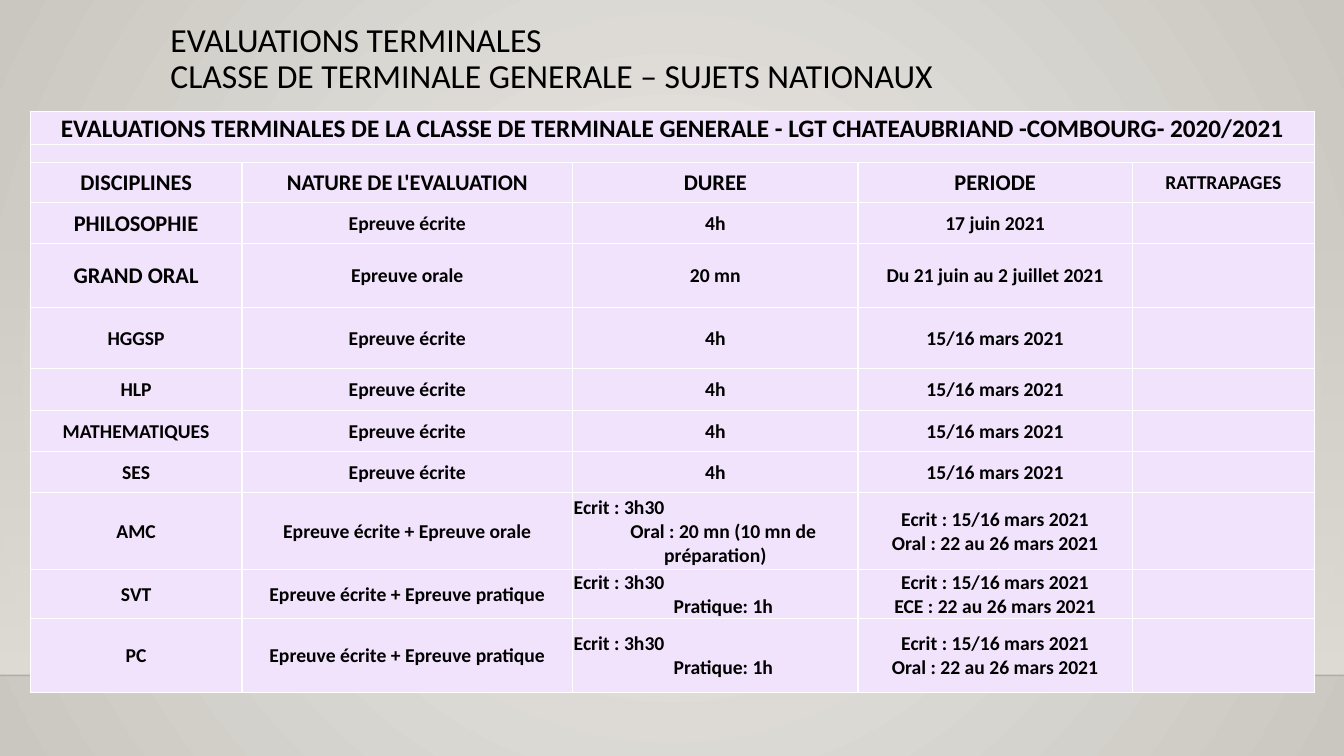
import pptx
import pptx.dml.color
import pptx.enum.shapes
import pptx.enum.text
import pptx.oxml
import pptx.oxml.ns
import pptx.util
from lxml import etree

Inches = pptx.util.Inches
Pt = pptx.util.Pt
qn = pptx.oxml.ns.qn
ALIGN = pptx.enum.text.PP_ALIGN
ANCHOR = pptx.enum.text.MSO_ANCHOR

COLORS = {
    "text": "000000",
    "cell": "F2E3FC",
    "border": "FFFFFF",
    "glow": "ECEAE7",
    "edge": "CAC7C1",
    "wall": "DFDBD5",
    "floor": "000001",
}
FONT = "Calibri"
COLUMN_WIDTHS = [2.1, 3.28, 2.83, 2.72, 1.81]
ROW_HEIGHTS = [0.32, 0.18, 0.4, 0.41, 0.63, 0.61, 0.41, 0.41, 0.41, 0.76, 0.49, 0.73]
TABLE_TITLE = ("EVALUATIONS TERMINALES DE LA CLASSE DE TERMINALE GENERALE"
               " - LGT CHATEAUBRIAND -COMBOURG- 2020/2021")
HEADINGS = ["DISCIPLINES", "NATURE DE L'EVALUATION", "DUREE", "PERIODE", "RATTRAPAGES"]
WRITTEN = "Epreuve écrite"
PRACTICAL = "Epreuve écrite + Epreuve pratique"
MARCH = "15/16 mars 2021"
ORAL_DATES = "Ecrit : 15/16 mars 2021\nOral : 22 au 26 mars 2021"
ECE_DATES = "Ecrit : 15/16 mars 2021\nECE : 22 au 26 mars 2021"
PRACTICAL_TIME = "Ecrit : 3h30\nPratique: 1h"
EXAMS = [
    ["PHILOSOPHIE", WRITTEN, "4h", "17 juin 2021", ""],
    ["GRAND ORAL", "Epreuve orale", "20 mn", "Du 21 juin au 2 juillet 2021", ""],
    *[[subject, WRITTEN, "4h", MARCH, ""]
      for subject in ("HGGSP", "HLP", "MATHEMATIQUES", "SES")],
    ["AMC", "Epreuve écrite + Epreuve orale",
     "Ecrit : 3h30\nOral : 20 mn (10 mn de préparation)", ORAL_DATES, ""],
    ["SVT", PRACTICAL, PRACTICAL_TIME, ECE_DATES, ""],
    ["PC", PRACTICAL, PRACTICAL_TIME, ORAL_DATES, ""],
]
LARGE_LABELS = HEADINGS[:4] + ["PHILOSOPHIE", "GRAND ORAL"]


def rgb(name):
    return pptx.dml.color.RGBColor.from_string(COLORS[name])


def set_alpha(color_parent, percent):
    for color in color_parent.iter(qn("a:srgbClr")):
        etree.SubElement(color, qn("a:alpha")).set("val", str(percent * 1000))


def set_gradient(fill, start, end):
    fill.gradient()
    for stop, name in zip(fill.gradient_stops, (start, end)):
        stop.color.rgb = rgb(name)
    fill.gradient_stops[0].position = 0
    fill.gradient_stops[1].position = 1


def set_font(paragraph, size, bold):
    paragraph.font.name = FONT
    paragraph.font.size = Pt(size)
    paragraph.font.bold = bold
    paragraph.font.color.rgb = rgb("text")


def add_backdrop(slide, left, top, width, height):
    set_gradient(slide.background.fill, "glow", "edge")
    gradient = next(slide.element.iter(qn("a:gradFill")))
    for linear in gradient.findall(qn("a:lin")):
        gradient.remove(linear)
    radial = etree.SubElement(gradient, qn("a:path"))
    radial.set("path", "circle")
    center = etree.SubElement(radial, qn("a:fillToRect"))
    for side in "ltrb":
        center.set(side, "50000")

    wall = slide.shapes.add_shape(
        pptx.enum.shapes.MSO_SHAPE.RECTANGLE, left, top, width, height)
    wall.shadow.inherit = False
    wall.line.fill.background()
    set_gradient(wall.fill, "wall", "wall")
    wall.fill.gradient_angle = 270
    set_alpha(next(wall.element.iter(qn("a:gs"))), 0)

    floor = slide.shapes.add_connector(
        pptx.enum.shapes.MSO_CONNECTOR.STRAIGHT,
        left, top + height, left + width, top + height)
    floor.line.width = Pt(1)
    floor.line.color.rgb = rgb("floor")
    set_alpha(floor.element.spPr, 20)
    etree.SubElement(floor.element.spPr, qn("a:effectLst"))


def add_title(slide, left, top, width, height):
    title = slide.shapes.title
    title.left, title.top, title.width, title.height = left, top, width, height
    frame = title.text_frame
    frame.text = "EVALUATIONS TERMINALES\vCLASSE DE TERMINALE GENERALE – SUJETS NATIONAUX"
    frame.word_wrap = True
    frame.auto_size = pptx.enum.text.MSO_AUTO_SIZE.NONE
    frame.vertical_anchor = ANCHOR.TOP
    heading = frame.paragraphs[0]
    heading.alignment = ALIGN.LEFT
    heading.line_spacing = 0.9
    set_font(heading, 24, False)


def style_cell(cell):
    cell.margin_left = cell.margin_right = cell.margin_top = Inches(0.01)
    cell.margin_bottom = 0
    cell.vertical_anchor = ANCHOR.MIDDLE
    properties = cell._tc.get_or_add_tcPr()
    for side in ("a:lnL", "a:lnR", "a:lnT", "a:lnB"):
        border = etree.SubElement(properties, qn(side))
        border.set("w", str(Pt(1)))
        paint = etree.SubElement(border, qn("a:solidFill"))
        etree.SubElement(paint, qn("a:srgbClr")).set("val", COLORS["border"])
    cell.fill.solid()
    cell.fill.fore_color.rgb = rgb("cell")


def fill_cell(cell, text, size):
    cell.text = text
    for paragraph in cell.text_frame.paragraphs:
        paragraph.alignment = ALIGN.CENTER
        set_font(paragraph, size, True)
        if not text:
            ending = etree.SubElement(paragraph._p, qn("a:endParaRPr"))
            ending.set("sz", str(size * 100))


def align_split_duration(cell):
    written, other = cell.text_frame.paragraphs
    written.alignment = ALIGN.LEFT
    other._p.get_or_add_pPr().set("indent", str(Inches(0.16)))


def add_exam_table(slide, left, top, width, height):
    rows = [[TABLE_TITLE] + [""] * 4, [""] * 5, HEADINGS] + EXAMS
    table = slide.shapes.add_table(
        len(rows), len(HEADINGS), left, top, width, height).table
    table.first_row = False
    table.horz_banding = False
    for column, column_width in zip(table.columns, COLUMN_WIDTHS):
        column.width = Inches(column_width)
    for row, row_height in zip(table.rows, ROW_HEIGHTS):
        row.height = Inches(row_height)
    for row_index, texts in enumerate(rows):
        for column_index, text in enumerate(texts):
            cell = table.cell(row_index, column_index)
            style_cell(cell)
            if text == TABLE_TITLE:
                size = 18
            elif text in LARGE_LABELS:
                size = 16
            else:
                size = 14 if text else 10
            fill_cell(cell, text, size)
            if HEADINGS[column_index] == "DUREE" and "\n" in text:
                align_split_duration(cell)
    for row_index in range(2):
        table.cell(row_index, 0).merge(table.cell(row_index, len(HEADINGS) - 1))


def main():
    presentation = pptx.Presentation()
    presentation.slide_width = Inches(13.33)
    presentation.slide_height = Inches(7.5)
    slide = presentation.slides.add_slide(presentation.slide_layouts[5])
    add_backdrop(slide, 0, Inches(2.21), presentation.slide_width, Inches(4.49))
    add_title(slide, Inches(1.59), Inches(0.18), Inches(10.5), Inches(0.93))
    add_exam_table(slide, Inches(0.3), Inches(1.11),
                   Inches(sum(COLUMN_WIDTHS)), Inches(sum(ROW_HEIGHTS)))
    presentation.save("out.pptx")


if __name__ == "__main__":
    main()
